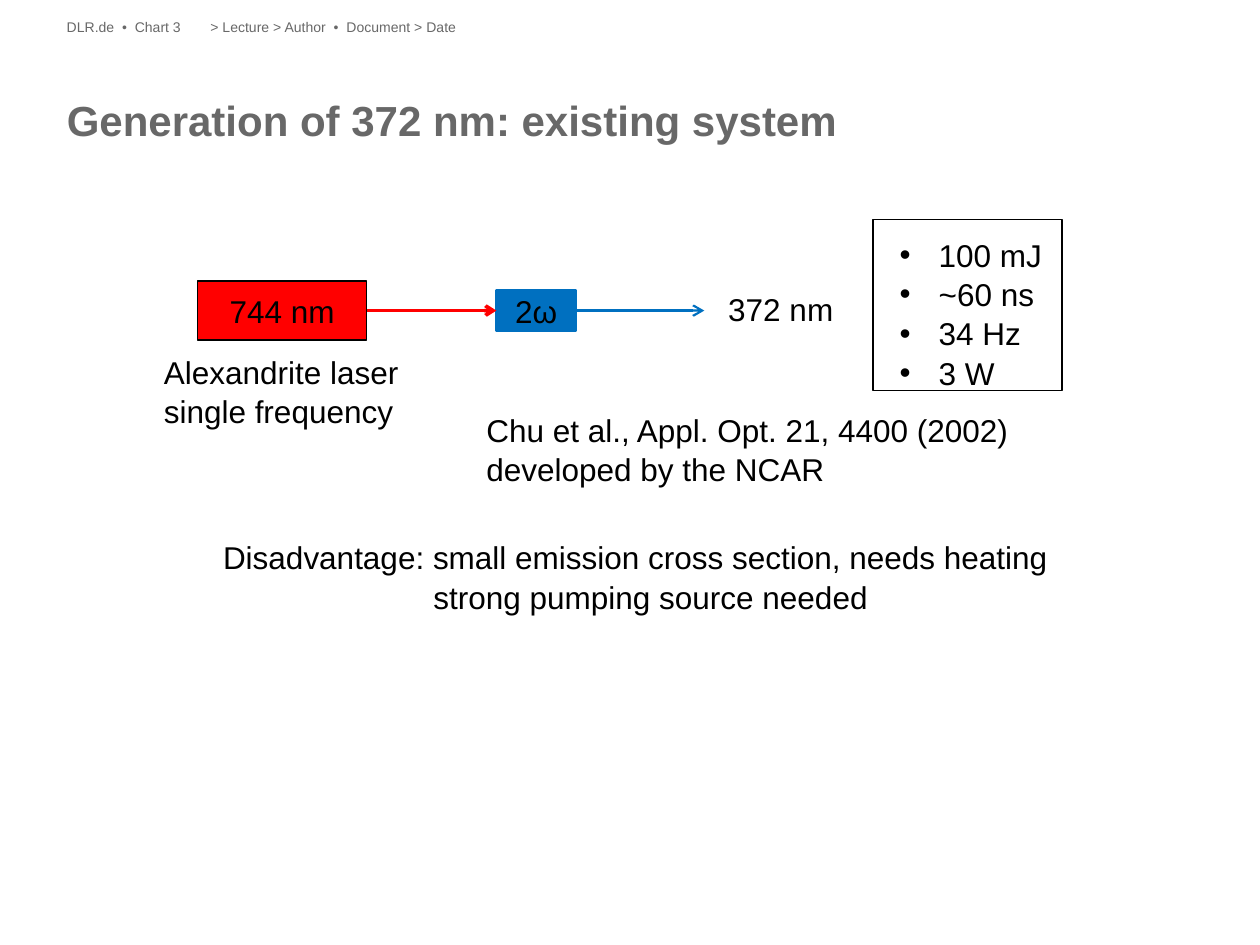
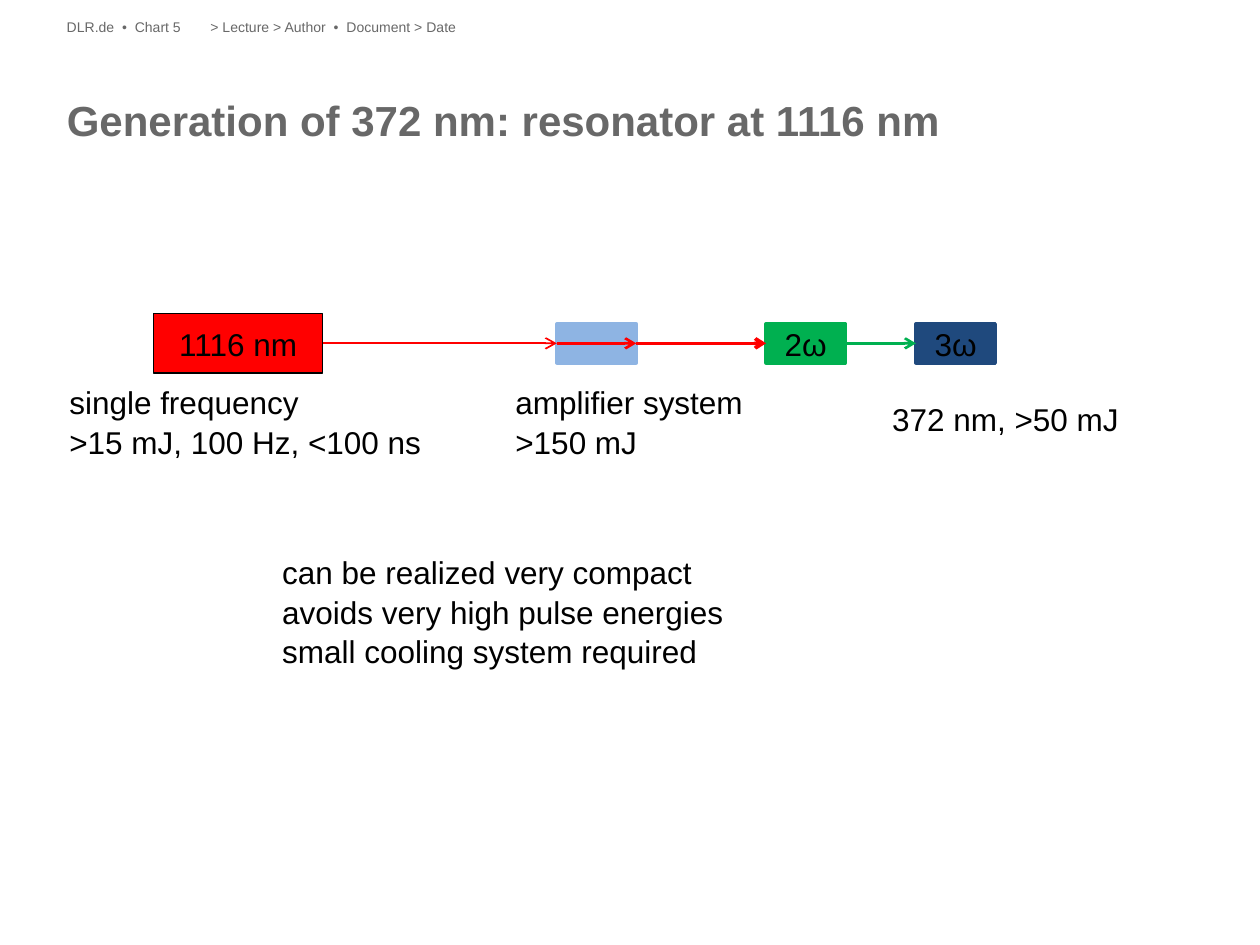
"""Build two slides on laser systems that generate 372 nm."""
from dataclasses import dataclass

from lxml import etree
from pptx import Presentation
from pptx import util as u
from pptx.dml.color import RGBColor
from pptx.enum import shapes, text
from pptx.oxml.ns import qn

EMU_PER_PX = 9144
LEFT, CENTER = text.PP_ALIGN.LEFT, text.PP_ALIGN.CENTER


@dataclass(frozen=True)
class Theme:
    font: str = "Arial"
    title_size: int = 24
    body_size: int = 18
    header_size: int = 8
    title_spacing: float = 1.1
    body_spacing: float = 1.04
    grey: str = "686868"
    black: str = "000000"
    red: str = "FF0000"
    blue: str = "0070C0"
    light_blue: str = "8EB4E3"
    navy: str = "1F497D"
    green: str = "00B050"


THEME = Theme()


def px(n):
    return u.Emu(n * EMU_PER_PX)


def rgb(color):
    return RGBColor.from_string(color)


def write(tf, lines, size=THEME.body_size, color=THEME.black, bold=False,
          align=LEFT, spacing=THEME.body_spacing, indents=None, bullet=None):
    for i, line in enumerate(lines):
        p = tf.paragraphs[0] if i == 0 else tf.add_paragraph()
        p.alignment, p.line_spacing = align, spacing
        p.space_before = p.space_after = u.Pt(0)
        pPr = p._p.get_or_add_pPr()
        if indents:
            pPr.set("marL", str(px(indents[i])))
        if bullet:
            pPr.set("indent", str(-px(indents[i])))
            etree.SubElement(pPr, qn("a:buChar")).set("char", bullet)
        r = p.add_run()
        r.text = line
        r.font.name, r.font.size, r.font.bold = THEME.font, u.Pt(size), bold
        r.font.color.rgb = rgb(color)


class Deck:
    LASER_W, LASER_H = 134, 47
    CRYSTAL_W, CRYSTAL_H = 63, 31

    def __init__(self, theme):
        self.theme = theme
        self.prs = Presentation()
        self.prs.slide_width, self.prs.slide_height = px(1000), px(750)
        self.slide = None

    def place(self, sp, x, y, w, h):
        sp.left, sp.top, sp.width, sp.height = map(px, (x, y, w, h))

    def frame(self, sp, wrap=True, fit=text.MSO_AUTO_SIZE.NONE):
        tf = sp.text_frame
        tf.margin_left = tf.margin_top = tf.margin_right = tf.margin_bottom = 0
        tf.vertical_anchor = text.MSO_ANCHOR.TOP
        tf.word_wrap, tf.auto_size = wrap, fit
        return tf

    def start(self, title, number, layout):
        t = self.theme
        self.slide = self.prs.slides.add_slide(self.prs.slide_layouts.get_by_name(layout))
        sp = self.slide.shapes.title
        self.place(sp, 53, 71, 894, 81)
        write(self.frame(sp), [title], t.title_size, t.grey, bold=True,
              spacing=t.title_spacing)
        header = dict(size=t.header_size, color=t.grey)
        self.label(167, 14, 780, 16, ["> Lecture > Author  •  Document > Date"],
                   wrap=True, **header)
        self.label(53, 14, 114, 16, [f"DLR.de  •  Chart {number}"], wrap=True, **header)

    def label(self, x, y, w, h, lines, wrap=False, **fmt):
        sp = self.slide.shapes.add_textbox(*map(px, (x, y, w, h)))
        fit = text.MSO_AUTO_SIZE.NONE if wrap else text.MSO_AUTO_SIZE.SHAPE_TO_FIT_TEXT
        write(self.frame(sp, wrap, fit), lines, **fmt)

    def bullets(self, x, y, w, h, lines):
        sp = self.slide.placeholders[1]
        self.place(sp, x, y, w, h)
        write(self.frame(sp, wrap=False), lines, indents=[31] * len(lines), bullet="•")

    def box(self, x, y, w, h, caption="", fill=None, line=THEME.black, weight=0.75):
        sp = self.slide.shapes.add_shape(shapes.MSO_SHAPE.RECTANGLE,
                                         *map(px, (x, y, w, h)))
        sp.shadow.inherit = False
        if fill:
            sp.fill.solid()
            sp.fill.fore_color.rgb = rgb(fill)
        else:
            sp.fill.background()
        sp.line.color.rgb, sp.line.width = rgb(line), u.Pt(weight)
        if caption:
            sp.text_frame.vertical_anchor = text.MSO_ANCHOR.MIDDLE
            write(sp.text_frame, [caption], align=CENTER)
        return sp

    def laser(self, x, axis_top, caption):
        return self.box(x, axis_top, self.LASER_W, self.LASER_H, caption, self.theme.red)

    def crystal(self, x, axis_top, color, caption=""):
        y = axis_top + (self.LASER_H - self.CRYSTAL_H) // 2
        return self.box(x, y, self.CRYSTAL_W, self.CRYSTAL_H, caption, color, color, 2)

    def beam(self, begin, end, color, weight, sites=(3, 1)):
        """Join two shapes, or run from a shape to an x position in px."""
        free = isinstance(end, int)
        y = begin.top + begin.height // 2
        sp = self.slide.shapes.add_connector(
            shapes.MSO_CONNECTOR.STRAIGHT, begin.left + begin.width, y,
            px(end) if free else end.left, y)
        sp.begin_connect(begin, sites[0])
        if not free:
            sp.end_connect(end, sites[1])
        sp.line.color.rgb, sp.line.width = rgb(color), u.Pt(weight)
        etree.SubElement(sp.line._get_or_add_ln(), qn("a:tailEnd")).set("type", "arrow")
        etree.SubElement(sp._element.spPr, qn("a:effectLst"))


def existing_system(deck):
    t, top = deck.theme, 223
    deck.start("Generation of 372 nm: existing system", 3, "Title and Content")
    laser = deck.laser(157, top, "744 nm")
    deck.label(130, 279, 188, 61, ["Alexandrite laser", "single frequency"])
    doubler = deck.crystal(394, top, t.blue, "2ω")
    deck.beam(laser, doubler, t.red, 2)
    deck.beam(doubler, 559, t.blue, 1.25)
    deck.bullets(714, 186, 114, 121, ["100 mJ", "~60 ns", "34 Hz", "3 W"])
    deck.label(578, 229, 84, 30, ["372 nm"])
    deck.label(386, 325, 418, 61,
               ["Chu et al., Appl. Opt. 21, 4400 (2002)", "developed by the NCAR"])
    deck.box(693, 174, 150, 136)
    deck.label(177, 426, 661, 61,
               ["Disadvantage: small emission cross section, needs heating",
                "strong pumping source needed"], indents=[0, 167])


def resonator(deck):
    t, top = deck.theme, 249
    deck.start("Generation of 372 nm: resonator at 1116 nm", 5, "Title Only")
    amplifier = deck.crystal(442, top, t.light_blue)
    laser = deck.laser(122, top, "1116 nm")
    deck.label(55, 303, 282, 61, ["single frequency", ">15 mJ, 100 Hz, <100 ns"])
    deck.label(409, 303, 182, 61, ["amplifier system", ">150 mJ"])
    tripler = deck.crystal(727, top, t.navy, "3ω")
    doubler = deck.crystal(608, top, t.green, "2ω")
    deck.label(708, 316, 182, 30, ["372 nm, >50 mJ"])
    deck.beam(laser, amplifier, t.red, 1)
    deck.beam(amplifier, amplifier, t.red, 1.5, sites=(1, 3))
    deck.beam(amplifier, doubler, t.red, 2)
    deck.beam(doubler, tripler, t.green, 1.5)
    deck.label(224, 438, 353, 91,
               ["can be realized very compact", "avoids very high pulse energies",
                "small cooling system required"])


def main():
    deck = Deck(THEME)
    existing_system(deck)
    resonator(deck)
    deck.prs.save("out.pptx")


if __name__ == "__main__":
    main()
